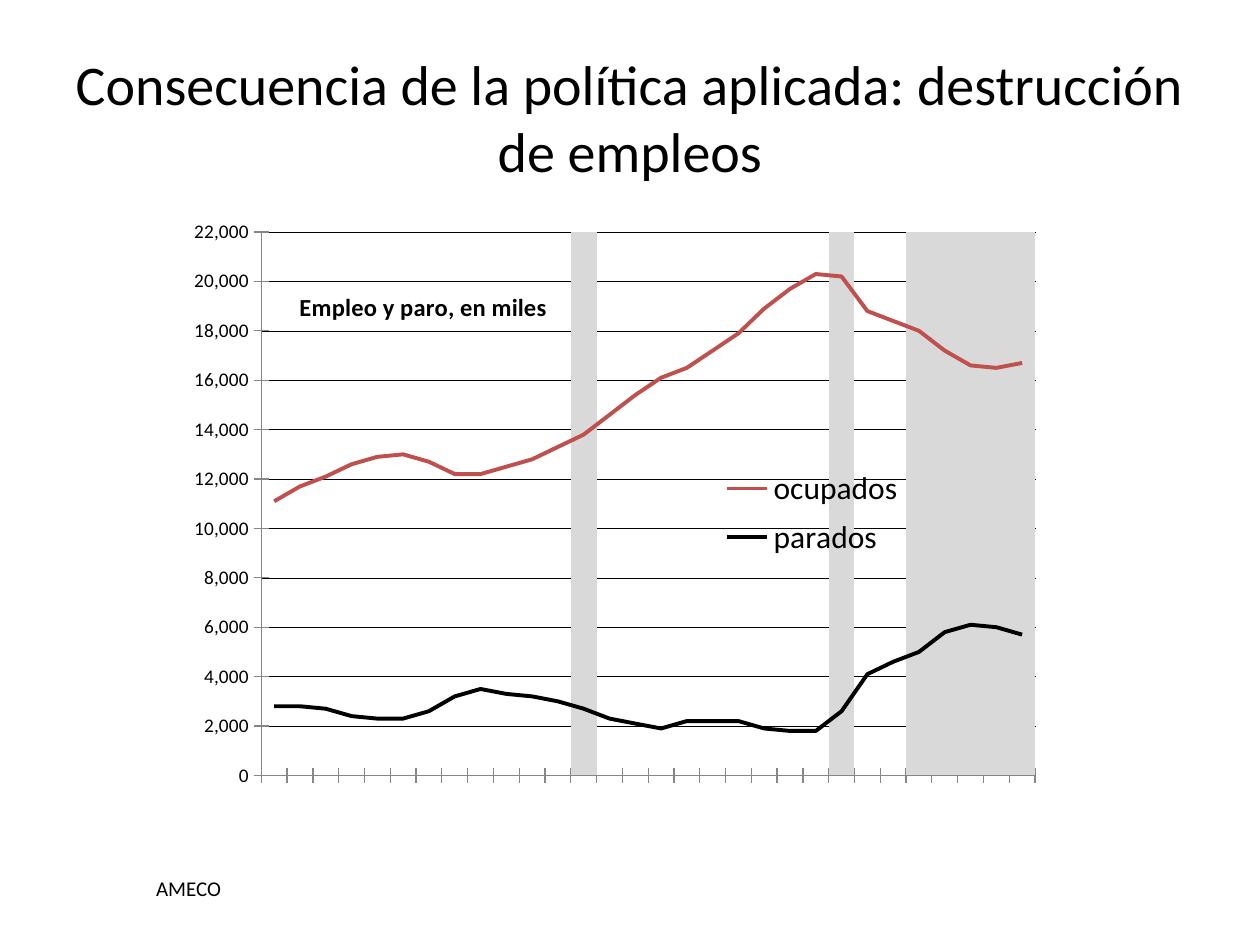
import pptx
import pptx.chart.data
import pptx.dml.color
import pptx.enum.chart
import pptx.enum.dml
import pptx.enum.text
import pptx.oxml
import pptx.oxml.ns
import pptx.util

Inches, Pt = pptx.util.Inches, pptx.util.Pt
qn = pptx.oxml.ns.qn
enums = pptx.enum.chart

COLORS = {"text": "000000", "band": "D9D9D9", "jobs": "C0504D",
          "idle": "000000", "axis": "868686"}
YEARS = range(1986, 2016)
SHADED = {1998, 2008, *range(2011, 2016)}
JOBS = [11100, 11700, 12100, 12600, 12900, 13000, 12700, 12200, 12200, 12500,
        12800, 13300, 13800, 14600, 15400, 16100, 16500, 17200, 17900, 18900,
        19700, 20300, 20200, 18800, 18400, 18000, 17200, 16600, 16500, 16700]
IDLE = [2800, 2800, 2700, 2400, 2300, 2300, 2600, 3200, 3500, 3300,
        3200, 3000, 2700, 2300, 2100, 1900, 2200, 2200, 2200, 1900,
        1800, 1800, 2600, 4100, 4600, 5000, 5800, 6100, 6000, 5700]


def rgb(name):
    return pptx.dml.color.RGBColor.from_string(COLORS[name])


def node(tag, inner="", attrs=""):
    """Make one chart XML element."""
    space = pptx.oxml.ns.nsdecls("c")
    return pptx.oxml.parse_xml(f"<c:{tag} {space} {attrs}>{inner}</c:{tag}>")


def place(part, x, y, w=None, h=None, inner=False):
    """Give a chart part a manual layout, in fractions of the chart."""
    items = [("layoutTarget", "inner")] if inner else []
    items += [("xMode", "edge"), ("yMode", "edge"), ("x", x), ("y", y)]
    if w:
        items += [("w", w), ("h", h)]
    body = "".join(f'<c:{tag} val="{val}"/>' for tag, val in items)
    new = node("layout", f"<c:manualLayout>{body}</c:manualLayout>")
    old, over = part.find(qn("c:layout")), part.find(qn("c:overlay"))
    if old is not None:
        part.replace(old, new)
    elif over is not None:
        over.addprevious(new)
    else:
        part.insert(0, new)


def split(chart):
    """Move every series after the first from the columns to a line plot."""
    bar = chart._chartSpace.find(".//" + qn("c:barChart"))
    line = node("lineChart", '<c:grouping val="standard"/><c:varyColors val="0"/>')
    for ser in bar.findall(qn("c:ser"))[1:]:
        for flag in ser.findall(qn("c:invertIfNegative")):
            ser.remove(flag)
        line.append(ser)
    line.append(node("marker", attrs='val="1"'))
    for axis in bar.findall(qn("c:axId")):
        line.append(node("axId", attrs=f'val="{axis.get("val")}"'))
    bar.addnext(line)


class Deck:
    face = "Calibri"

    def __init__(self):
        self.file = pptx.Presentation()
        self.file.slide_width, self.file.slide_height = Inches(10), Inches(7.5)
        self.slide = self.file.slides.add_slide(self.file.slide_layouts[5])

    def style(self, font, size, bold=False):
        font.name, font.size, font.bold = self.face, Pt(size), bold
        font.color.rgb = rgb("text")

    def title(self, text, x, y, w, h):
        box = self.slide.shapes.title
        box.left, box.top, box.width, box.height = map(Inches, (x, y, w, h))
        frame = box.text_frame
        frame.text = text
        frame.vertical_anchor = pptx.enum.text.MSO_ANCHOR.MIDDLE
        frame.paragraphs[0].alignment = pptx.enum.text.PP_ALIGN.CENTER
        self.style(frame.paragraphs[0].runs[0].font, 32)

    def note(self, text, x, y, w, h):
        box = self.slide.shapes.add_textbox(*map(Inches, (x, y, w, h)))
        frame = box.text_frame
        frame.word_wrap = True
        frame.text = text
        self.style(frame.paragraphs[0].runs[0].font, 12)

    def chart(self, head, x, y, w, h):
        data = pptx.chart.data.CategoryChartData()
        data.categories = [str(year) for year in YEARS]
        data.add_series("Series 1", [100000 if year in SHADED else None
                                     for year in YEARS])
        data.add_series("ocupados", JOBS)
        data.add_series("parados", IDLE)
        chart = self.slide.shapes.add_chart(
            enums.XL_CHART_TYPE.COLUMN_STACKED,
            *map(Inches, (x, y, w, h)), data).chart
        self.style(chart.font, 10)
        split(chart)

        bars, lines = chart.plots
        bars.gap_width, bars.overlap = 0, 100
        bars.vary_by_categories = False
        fill = bars.series[0].format.fill
        fill.solid()
        fill.fore_color.rgb = rgb("band")
        for ser, name in zip(lines.series, ("jobs", "idle")):
            ser.smooth = False
            ser.marker.style = enums.XL_MARKER_STYLE.NONE
            ser.format.line.color.rgb = rgb(name)
            ser.format.line.width = Pt(2.25)

        self.axes(chart)
        self.labels(chart, head)
        place(chart._chartSpace.find(".//" + qn("c:plotArea")),
              0.08, 0.03, 0.92, 0.91, inner=True)

    def axes(self, chart):
        years, count = chart.category_axis, chart.value_axis
        for axis, size in ((years, 12), (count, 11)):
            axis.major_tick_mark = enums.XL_TICK_MARK.CROSS
            axis.minor_tick_mark = enums.XL_TICK_MARK.NONE
            axis.format.line.color.rgb = rgb("axis")
            self.style(axis.tick_labels.font, size)
        years.tick_label_position = enums.XL_TICK_LABEL_POSITION.NONE
        count.minimum_scale, count.maximum_scale = 0, 22000
        count.major_unit = 2000
        count.tick_labels.number_format = "#,##0"
        count.tick_labels.number_format_is_linked = False
        grid = count.major_gridlines.format.line
        grid.color.rgb = rgb("text")
        grid.width = Pt(0.25)
        grid.dash_style = pptx.enum.dml.MSO_LINE.ROUND_DOT

    def labels(self, chart, head):
        """Set the chart title and the legend inside the plot."""
        frame = chart.chart_title.text_frame
        frame.text = head
        self.style(frame.paragraphs[0].runs[0].font, 14, True)
        title = chart._chartSpace.find(".//" + qn("c:title"))
        place(title, 0.12, 0.12)
        title.find(qn("c:overlay")).set("val", "1")

        chart.has_legend = True
        key = chart.legend
        key.position = enums.XL_LEGEND_POSITION.RIGHT
        key.include_in_layout = False
        self.style(key.font, 18)
        part = chart._chartSpace.find(".//" + qn("c:legend"))
        part.find(qn("c:legendPos")).addnext(
            node("legendEntry", '<c:idx val="0"/><c:delete val="1"/>'))
        place(part, 0.6, 0.41, 0.27, 0.18)


def main():
    deck = Deck()
    deck.title("Consecuencia de la política aplicada: destrucción de empleos",
               0.5, 0.3, 9, 1.25)
    deck.chart("Empleo y paro, en miles", 1.54, 1.7, 6.68, 4.74)
    deck.note("AMECO", 1.14, 6.9, 1.73, 0.3)
    deck.file.save("out.pptx")


if __name__ == "__main__":
    main()
